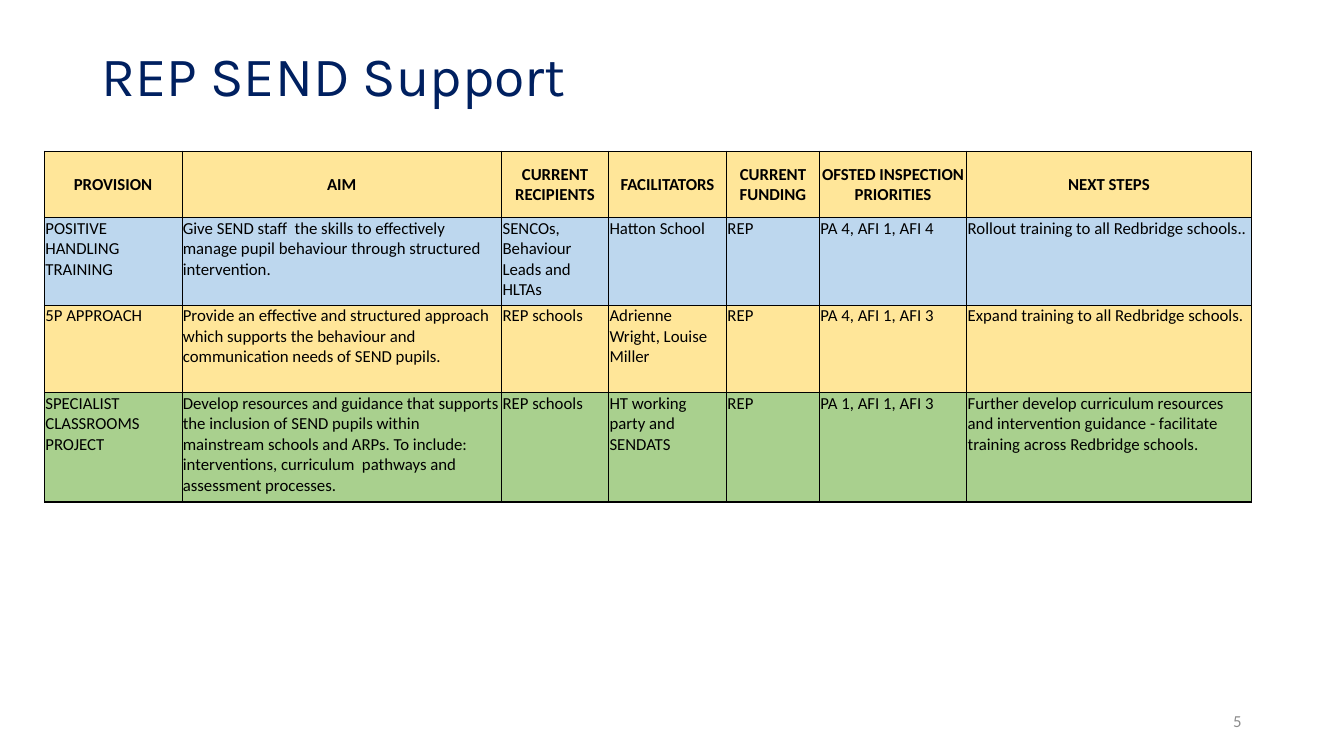
from dataclasses import dataclass

from lxml import etree
from pptx import Presentation
from pptx.dml.color import RGBColor
from pptx.enum.text import MSO_ANCHOR, PP_ALIGN
from pptx.oxml.ns import qn
from pptx.slide import Slide
from pptx.table import _Cell
from pptx.util import Pt

TOP, MIDDLE = MSO_ANCHOR.TOP, MSO_ANCHOR.MIDDLE
LEFT, CENTER, RIGHT = PP_ALIGN.LEFT, PP_ALIGN.CENTER, PP_ALIGN.RIGHT

COLORS = {
    "navy": "002060",
    "grey": "8C8C8C",
    "black": "000000",
    "yellow": "FFE699",
    "blue": "BDD7EE",
    "green": "A9D08E",
}
COLUMN_WIDTHS = (98.2, 228.4, 76.4, 84.3, 66.4, 105.2, 203.4)
CELL_MARGIN = 0.72
OUTER_LINE, INNER_LINE = 1, 0.5


@dataclass(frozen=True)
class Label:
    text: str
    left: float
    top: float
    width: float
    height: float
    font: str
    size: float
    color: str
    align: PP_ALIGN
    anchor: MSO_ANCHOR
    margin_top: float
    line_spacing: float


@dataclass(frozen=True)
class TableRow:
    height: float
    color: str
    texts: tuple[str, ...]


LABELS = (
    Label("REP SEND Support", 65.5, 33.8, 828, 166.3, "Karla", 39.6, "navy", LEFT, TOP, 0.9, 0.9),
    Label("5", 678, 500.5, 216, 28.8, "Calibri", 12, "grey", RIGHT, MIDDLE, 3.6, 1.0),
)

ROWS = (
    TableRow(47.3, "yellow", (
        "PROVISION", "AIM", "CURRENT RECIPIENTS", "FACILITATORS", "CURRENT FUNDING",
        "OFSTED INSPECTION PRIORITIES", "NEXT STEPS",
    )),
    TableRow(62.5, "blue", (
        "POSITIVE HANDLING TRAINING",
        "Give SEND staff  the skills to effectively manage pupil behaviour "
        "through structured intervention.",
        "SENCOs, Behaviour Leads and HLTAs", "Hatton School", "REP", "PA 4, AFI 1, AFI 4",
        "Rollout training to all Redbridge schools..",
    )),
    TableRow(62.5, "yellow", (
        "5P APPROACH",
        "Provide an effective and structured approach which supports the behaviour "
        "and communication needs of SEND pupils.",
        "REP schools", "Adrienne Wright, Louise Miller", "REP", "PA 4, AFI 1, AFI 3",
        "Expand training to all Redbridge schools.",
    )),
    TableRow(78.3, "green", (
        "SPECIALIST CLASSROOMS PROJECT",
        "Develop resources and guidance that supports the inclusion of SEND pupils within "
        "mainstream schools and ARPs. To include: interventions, curriculum  pathways "
        "and assessment processes.",
        "REP schools", "HT working party and SENDATS", "REP", "PA 1, AFI 1, AFI 3",
        "Further develop curriculum resources and intervention guidance - "
        "facilitate training across Redbridge schools.",
    )),
)


def rgb(name: str) -> RGBColor:
    return RGBColor.from_string(COLORS[name])


def draw_label(page: Slide, label: Label) -> None:
    box = page.shapes.add_textbox(
        Pt(label.left), Pt(label.top), Pt(label.width), Pt(label.height)
    )
    frame = box.text_frame
    frame.word_wrap = True
    frame.vertical_anchor = label.anchor
    frame.margin_top = Pt(label.margin_top)
    frame.text = label.text
    para = frame.paragraphs[0]
    para.alignment = label.align
    para.line_spacing = label.line_spacing
    span = para.runs[0]
    span.font.name = label.font
    span.font.size = Pt(label.size)
    span.font.color.rgb = rgb(label.color)


def add_borders(cell: _Cell, widths: dict[str, float]) -> None:
    properties = cell._tc.get_or_add_tcPr()
    for side, width in widths.items():
        line = etree.SubElement(properties, qn(f"a:ln{side}"), w=str(Pt(width)))
        fill = etree.SubElement(line, qn("a:solidFill"))
        etree.SubElement(fill, qn("a:srgbClr"), val=COLORS["black"])


def draw_cell(cell: _Cell, text: str, color: str, is_header: bool) -> None:
    cell.fill.solid()
    cell.fill.fore_color.rgb = rgb(color)
    cell.margin_left = cell.margin_right = cell.margin_top = Pt(CELL_MARGIN)
    cell.margin_bottom = Pt(0)
    cell.vertical_anchor = MIDDLE if is_header else TOP
    cell.text_frame.text = text
    para = cell.text_frame.paragraphs[0]
    para.alignment = CENTER if is_header else LEFT
    span = para.runs[0]
    span.font.name = "Calibri"
    span.font.size = Pt(12)
    span.font.bold = is_header
    span.font.color.rgb = rgb("black")


def draw_table(page: Slide, left: float, top: float) -> None:
    last_row, last_column = len(ROWS) - 1, len(COLUMN_WIDTHS) - 1
    table = page.shapes.add_table(
        len(ROWS), len(COLUMN_WIDTHS), Pt(left), Pt(top),
        Pt(sum(COLUMN_WIDTHS)), Pt(sum(row.height for row in ROWS)),
    ).table
    table.first_row = False
    table.horz_banding = False
    for column, width in zip(table.columns, COLUMN_WIDTHS):
        column.width = Pt(width)
    for row_index, row in enumerate(ROWS):
        table.rows[row_index].height = Pt(row.height)
        for column_index, text in enumerate(row.texts):
            cell = table.cell(row_index, column_index)
            on_edge = {
                "L": column_index == 0,
                "R": column_index == last_column,
                "T": row_index == 0,
                "B": row_index == last_row,
            }
            add_borders(cell, {
                side: OUTER_LINE if edge else INNER_LINE for side, edge in on_edge.items()
            })
            draw_cell(cell, text, row.color, row_index == 0)


def main() -> None:
    deck = Presentation()
    deck.slide_width, deck.slide_height = Pt(960), Pt(540)
    page = deck.slides.add_slide(deck.slide_layouts[6])
    for label in LABELS:
        draw_label(page, label)
    draw_table(page, 31.7, 108)
    deck.save("out.pptx")


if __name__ == "__main__":
    main()
